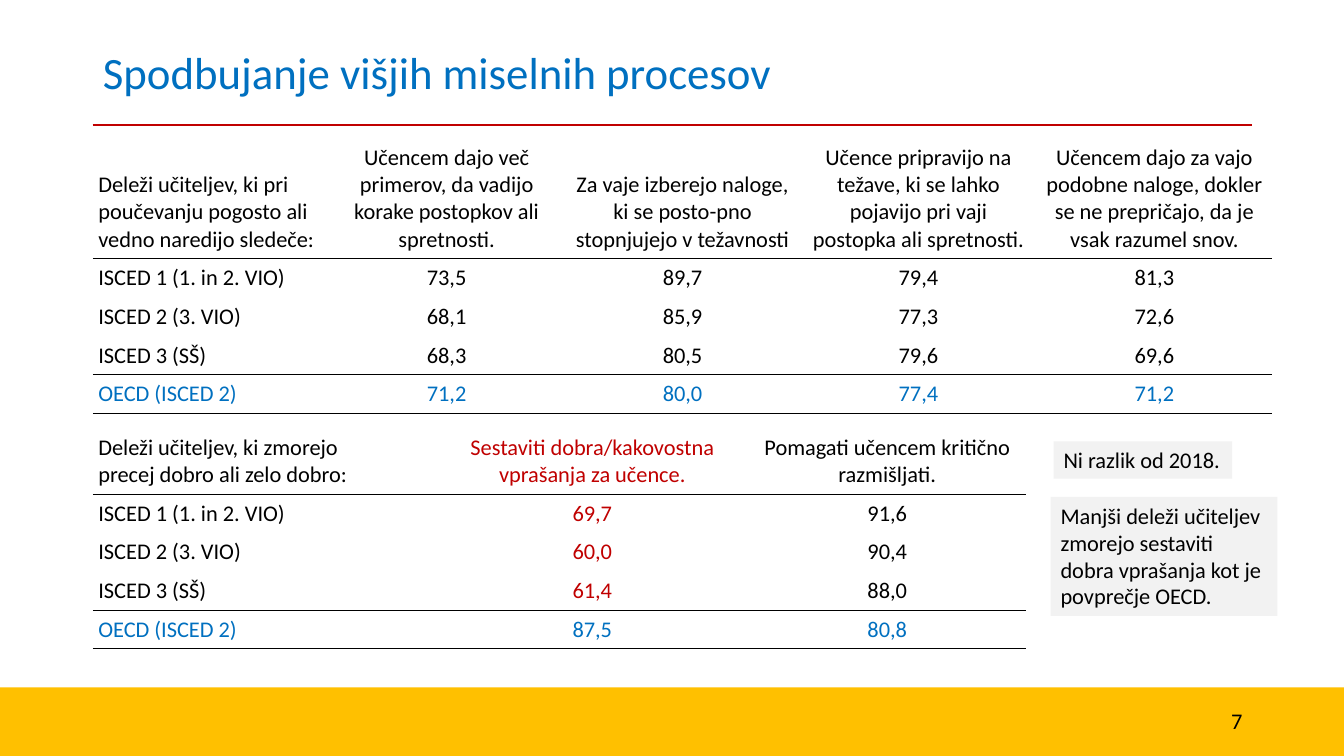
"""Builds a slide with two tables on encouraging higher-order thinking."""
from lxml.etree import SubElement
from pptx import Presentation
from pptx.dml.color import RGBColor
from pptx.enum.shapes import MSO_CONNECTOR, MSO_SHAPE
from pptx.enum.text import MSO_ANCHOR, PP_ALIGN
from pptx.oxml import parse_xml
from pptx.oxml.ns import nsdecls, qn
from pptx.util import Inches, Pt

BLACK, BLUE, RED, YELLOW, GREY = "000000", "0070C0", "C00000", "FFC000", "F2F2F2"
NO_STYLE = "{2D5ABB26-0587-4C30-8999-92F81FD0307C}"
TITLE = "Spodbujanje višjih miselnih procesov"
LEVELS = ["ISCED 1 (1. in 2. VIO)", "ISCED 2 (3. VIO)", "ISCED 3 (SŠ)", "OECD (ISCED 2)"]
TABLES = [
    {
        "top": 1.37, "widths": [2.34] * 5, "head_height": 1.18, "red_column": None,
        "head": [
            "Deleži učiteljev, ki pri poučevanju pogosto ali vedno naredijo sledeče:",
            "Učencem dajo več primerov, da vadijo korake postopkov ali spretnosti.",
            "Za vaje izberejo naloge, ki se posto-pno stopnjujejo v težavnosti",
            "Učence pripravijo na težave, ki se lahko pojavijo pri vaji postopka ali spretnosti.",
            "Učencem dajo za vajo podobne naloge, dokler se ne prepričajo, da je vsak razumel snov.",
        ],
        "values": [
            ["73,5", "89,7", "79,4", "81,3"],
            ["68,1", "85,9", "77,3", "72,6"],
            ["68,3", "80,5", "79,6", "69,6"],
            ["71,2", "80,0", "77,4", "71,2"],
        ],
    },
    {
        "top": 4.25, "widths": [3.41, 3.09, 2.76], "head_height": 0.64, "red_column": 1,
        "head": [
            "Deleži učiteljev, ki zmorejo\nprecej dobro ali zelo dobro:",
            "Sestaviti dobra/kakovostna vprašanja za učence.",
            "Pomagati učencem kritično razmišljati.",
        ],
        "values": [["69,7", "91,6"], ["60,0", "90,4"], ["61,4", "88,0"], ["87,5", "80,8"]],
    },
]
NOTES = [
    ("Ni razlik od 2018.", (10.45, 4.38, 1.77, 0.37), False),
    ("Manjši deleži učiteljev zmorejo sestaviti dobra vprašanja kot je povprečje OECD.",
     (10.42, 4.93, 2.25, 1.18), True),
]
WIDTH, HEIGHT = 13.33, 7.5
LEFT, CONTENT = 0.92, 11.5
FOOTER_TOP = 6.82
ROW_HEIGHT = 0.38


def rgb(color):
    """Turn a hex string into a colour."""
    return RGBColor.from_string(color)


def box(left, top, width, height):
    """Convert inches into slide lengths."""
    return [Inches(v) for v in (left, top, width, height)]


def write(tf, text, size=16, color=BLACK, align=PP_ALIGN.LEFT, spacing=None):
    """Fill a text frame, one paragraph per line of text."""
    for i, line in enumerate(text.split("\n")):
        p = tf.add_paragraph() if i else tf.paragraphs[0]
        p.alignment = align
        p.line_spacing = spacing
        r = p.add_run()
        r.text = line
        r.font.name, r.font.size = "Calibri", Pt(size)
        r.font.color.rgb = rgb(color)


def add_block(slide, place, fill):
    """Add a plain filled rectangle."""
    sp = slide.shapes.add_shape(MSO_SHAPE.RECTANGLE, *box(*place))
    sp.shadow.inherit = False
    sp.fill.solid()
    sp.fill.fore_color.rgb = rgb(fill)
    sp.line.fill.background()
    return sp


def rule_below(cell):
    """Draw a thin line under a cell."""
    cell._tc.get_or_add_tcPr().insert(0, parse_xml(
        f'<a:lnB {nsdecls("a")} w="12700"><a:solidFill><a:srgbClr val="{BLACK}"/>'
        '</a:solidFill></a:lnB>'))


def add_results(slide, top, widths, head_height, red_column, head, values):
    """Add a table with a header, the school levels and the OECD row."""
    rows = [head] + [[level] + row for level, row in zip(LEVELS, values)]
    last = len(rows) - 1
    place = box(LEFT, top, sum(widths), head_height + ROW_HEIGHT * last)
    table = slide.shapes.add_table(len(rows), len(widths), *place).table
    table.first_row = table.horz_banding = False
    table._tbl.tblPr.find(qn("a:tableStyleId")).text = NO_STYLE
    for column, width in zip(table.columns, widths):
        column.width = Inches(width)
    for i, row in enumerate(rows):
        table.rows[i].height = Inches(ROW_HEIGHT if i else head_height)
        for j, text in enumerate(row):
            cell = table.cell(i, j)
            cell.margin_left = cell.margin_right = Pt(4)
            cell.margin_top = cell.margin_bottom = Pt(4)
            cell.vertical_anchor = MSO_ANCHOR.MIDDLE if i and j else MSO_ANCHOR.BOTTOM
            cell.fill.background()
            color = BLUE if i == last else RED if j == red_column else BLACK
            write(cell.text_frame, text, color=color,
                  align=PP_ALIGN.CENTER if j else PP_ALIGN.LEFT)
            if i in (0, last - 1, last):
                rule_below(cell)


def main():
    """Build and save the slide."""
    prs = Presentation()
    prs.slide_width, prs.slide_height = Inches(WIDTH), Inches(HEIGHT)
    slide = prs.slides.add_slide(prs.slide_layouts[5])

    add_block(slide, (0, FOOTER_TOP, WIDTH, HEIGHT - FOOTER_TOP), YELLOW)
    line = slide.shapes.add_connector(
        MSO_CONNECTOR.STRAIGHT, *box(LEFT, 1.24, LEFT + CONTENT, 1.24))
    line.line.color.rgb, line.line.width = rgb(RED), Pt(2)
    SubElement(line._element.spPr, qn("a:effectLst"))

    title = slide.shapes.title
    title.left, title.top, title.width, title.height = box(LEFT, 0.4, CONTENT, 0.68)
    title.text_frame.vertical_anchor = MSO_ANCHOR.MIDDLE
    write(title.text_frame, TITLE, size=32, color=BLUE, spacing=0.9)

    for spec_table in TABLES:
        add_results(slide, **spec_table)

    for text, place, wrap in NOTES:
        tf = add_block(slide, place, GREY).text_frame
        tf.word_wrap = wrap
        tf.vertical_anchor = MSO_ANCHOR.TOP
        write(tf, text)

    number = slide.shapes.add_textbox(*box(11.54, 6.95, 0.88, 0.4)).text_frame
    number.word_wrap = True
    number.vertical_anchor = MSO_ANCHOR.MIDDLE
    write(number, "7", align=PP_ALIGN.RIGHT)

    prs.save("out.pptx")


if __name__ == "__main__":
    main()
